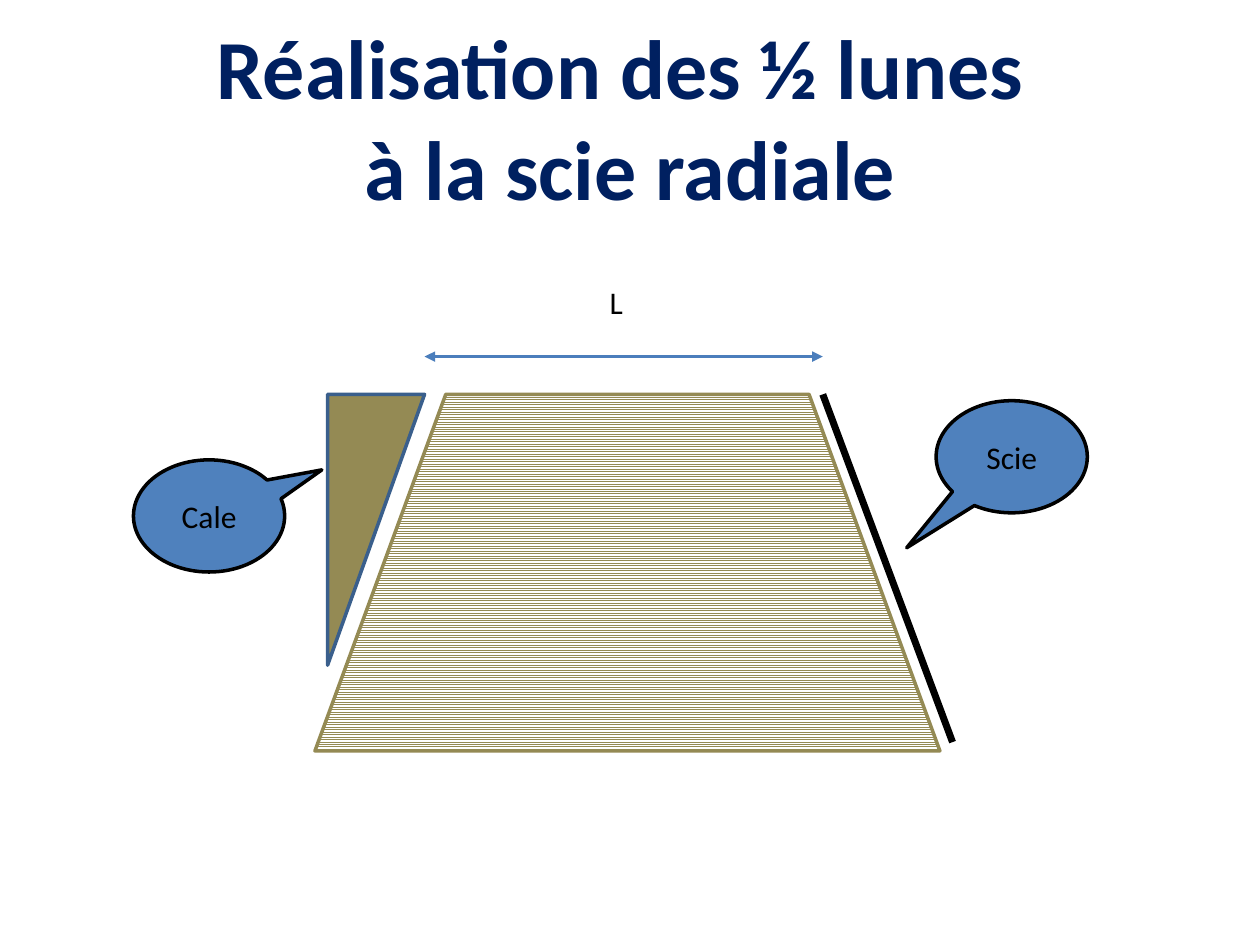
import pptx
import pptx.dml.color
import pptx.enum.dml
import pptx.enum.shapes
import pptx.enum.text
import pptx.oxml
import pptx.oxml.ns
import pptx.util
from dataclasses import dataclass

Inches = pptx.util.Inches
SHAPES = pptx.enum.shapes.MSO_SHAPE
ANCHOR = pptx.enum.text.MSO_ANCHOR
ALIGN = pptx.enum.text.PP_ALIGN


@dataclass(frozen=True)
class Theme:
    font: str = "Calibri"
    title_size: int = 48
    label_size: int = 18
    navy: str = "002060"
    black: str = "000000"
    white: str = "FFFFFF"
    wood: str = "948A54"
    wedge_edge: str = "3A5F8C"
    dimension: str = "4B7EBC"
    callout: str = "4F81BD"
    outline: int = 2
    blade: int = 4


THEME = Theme()

TITLE = ("Réalisation des ½ lunes \và la scie radiale", (0.5, 0.3, 9, 1.25))
LENGTH_LABEL = ("L", (4.74, 2.2, 0.34, 0.63))
BOARD = (2.5, 3.13, 4.96, 2.83)
BOARD_SLANT = 0.367
WEDGE = (2.6, 3.13, 0.77, 2.15)
BLADE_END = (7.56, 5.89)
DIMENSION_GAP = 0.3
CALLOUT_SIZE = (1.2, 0.89)
CALLOUTS = [
    ("Cale", (1.06, 3.65), (0.746, -0.411)),
    ("Scie", (7.43, 3.18), (-0.695, 0.812)),
]


def rgb(color):
    return pptx.dml.color.RGBColor.from_string(color)


def write(shape, text, *, size=THEME.label_size, color=THEME.black, bold=False,
          align=ALIGN.CENTER, anchor=ANCHOR.MIDDLE, wrap=True):
    frame = shape.text_frame
    frame.word_wrap = wrap
    frame.vertical_anchor = anchor
    paragraph = frame.paragraphs[0]
    paragraph.text = text
    paragraph.alignment = align
    for run in paragraph.runs:
        run.font.name = THEME.font
        run.font.size = pptx.util.Pt(size)
        run.font.bold = bold
        run.font.color.rgb = rgb(color)


def add_box(slide, box):
    return slide.shapes.add_textbox(*map(Inches, box))


def add_part(slide, kind, box, fill, edge):
    part = slide.shapes.add_shape(kind, *map(Inches, box))
    part.shadow.inherit = False
    part.fill.solid()
    part.fill.fore_color.rgb = rgb(fill)
    part.line.color.rgb = rgb(edge)
    part.line.width = pptx.util.Pt(THEME.outline)
    return part


def add_line(slide, start, end, color, width, arrows=False):
    line = slide.shapes.add_connector(
        pptx.enum.shapes.MSO_CONNECTOR.STRAIGHT, *map(Inches, start + end))
    line.line.color.rgb = rgb(color)
    line.line.width = pptx.util.Pt(width)
    if arrows:
        stroke = line.line._get_or_add_ln()
        for tag in ("a:headEnd", "a:tailEnd"):
            tip = pptx.oxml.parse_xml(f"<{tag} {pptx.oxml.ns.nsdecls('a')}/>")
            tip.set("type", "triangle")
            stroke.append(tip)
    line.element.spPr.append(
        pptx.oxml.parse_xml(f"<a:effectLst {pptx.oxml.ns.nsdecls('a')}/>"))


def main():
    deck = pptx.Presentation()
    deck.slide_width, deck.slide_height = Inches(10), Inches(7.5)
    slide = deck.slides.add_slide(deck.slide_layouts[6])

    text, box = TITLE
    write(add_box(slide, box), text, size=THEME.title_size,
          color=THEME.navy, bold=True)

    board = add_part(slide, SHAPES.TRAPEZOID, BOARD, THEME.wood, THEME.wood)
    board.adjustments[0] = BOARD_SLANT
    board.fill.patterned()
    board.fill.pattern = pptx.enum.dml.MSO_PATTERN.LIGHT_HORIZONTAL
    board.fill.fore_color.rgb = rgb(THEME.wood)
    board.fill.back_color.rgb = rgb(THEME.white)

    wedge = add_part(slide, SHAPES.RIGHT_TRIANGLE, WEDGE, THEME.wood,
                     THEME.wedge_edge)
    wedge.element.spPr.xfrm.set("flipV", "1")

    blade_start = (6.53, BOARD[1])
    add_line(slide, blade_start, BLADE_END, THEME.black, THEME.blade)

    text, box = LENGTH_LABEL
    write(add_box(slide, box), text, align=ALIGN.LEFT, anchor=ANCHOR.TOP,
          wrap=False)
    dimension_y = BOARD[1] - DIMENSION_GAP
    add_line(slide, (WEDGE[0] + WEDGE[2], dimension_y),
             (blade_start[0], dimension_y), THEME.dimension, THEME.outline,
             arrows=True)

    for text, corner, pointer in CALLOUTS:
        callout = add_part(slide, SHAPES.OVAL_CALLOUT, corner + CALLOUT_SIZE,
                           THEME.callout, THEME.black)
        for index, offset in enumerate(pointer):
            callout.adjustments[index] = offset
        write(callout, text)

    deck.save("out.pptx")


if __name__ == "__main__":
    main()
